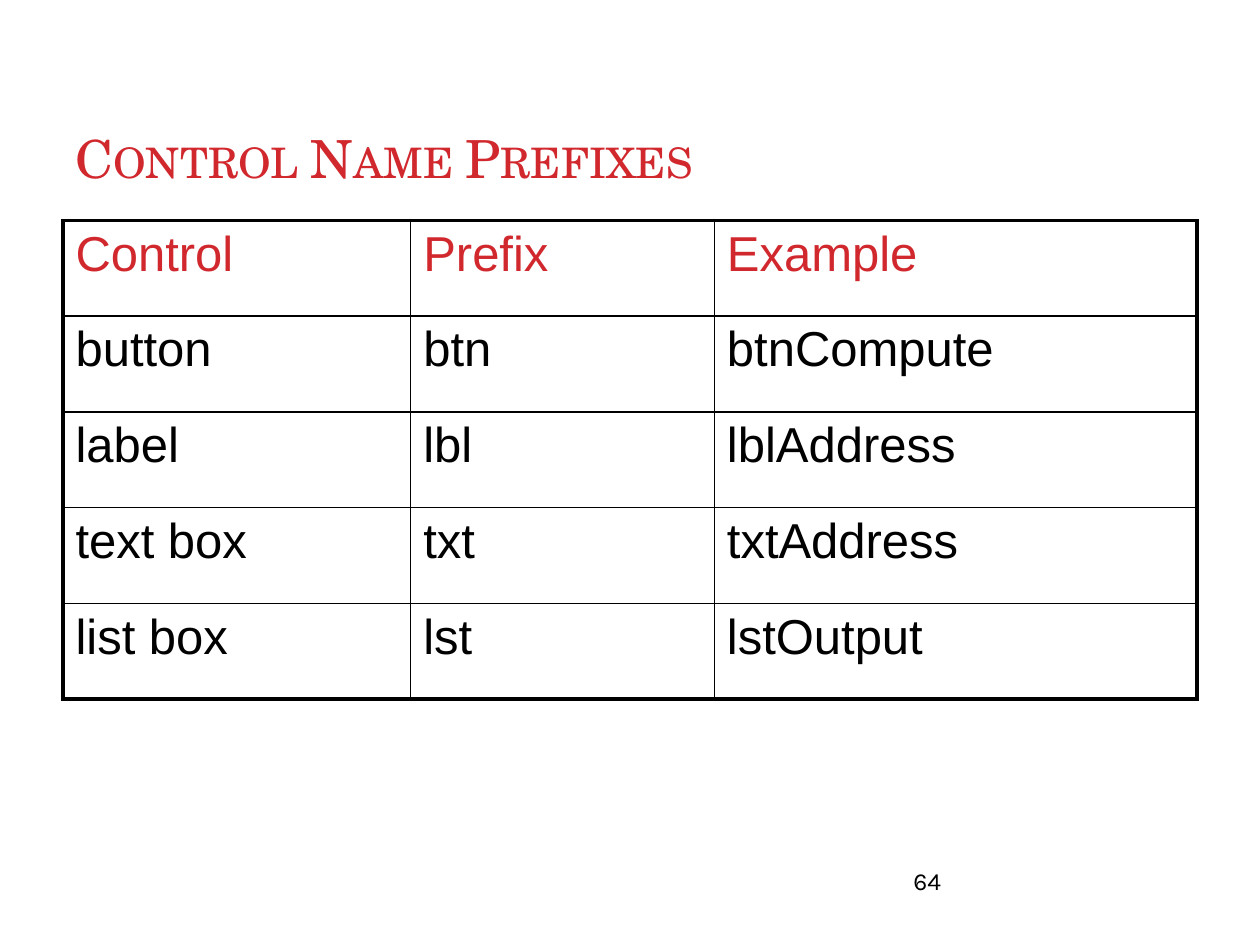
import pptx
import pptx.dml.color
import pptx.enum.text
import pptx.oxml.ns
import pptx.util
from lxml import etree

Inches = pptx.util.Inches
Pt = pptx.util.Pt
Anchor = pptx.enum.text.MSO_ANCHOR
RED = pptx.dml.color.RGBColor(0xD1, 0x28, 0x2E)
BLACK = pptx.dml.color.RGBColor(0, 0, 0)

PREFIXES = [
    ("Control", "Prefix", "Example"),
    ("button", "btn", "btnCompute"),
    ("label", "lbl", "lblAddress"),
    ("text box", "txt", "txtAddress"),
    ("list box", "lst", "lstOutput"),
]


def add_child(parent, name, **attributes):
    return etree.SubElement(parent, pptx.oxml.ns.qn(name), attributes)


def write_text(frame, text, *, font, size, color, small_caps=False, space_before=None):
    para = frame.paragraphs[0]
    span = para.add_run()
    span.text = text
    span.font.name = font
    span.font.size = Pt(size)
    span.font.color.rgb = color
    if small_caps:
        span._r.get_or_add_rPr().set("cap", "small")
    if space_before is not None:
        spacing = add_child(para._p.get_or_add_pPr(), "a:spcBef")
        add_child(spacing, "a:spcPct", val=str(space_before * 1000))


class SlideBuilder:
    title_font = "TeX Gyre Schola"
    table_font = "Arial"
    number_font = "Karla"
    outer_line = Pt(2.25)
    inner_line = Pt(1)

    def __init__(self, deck):
        self.page = deck.slides.add_slide(deck.slide_layouts[6])

    def text(self, text, left, top, width, height, *, anchor=Anchor.TOP,
             inset=(0.1, 0.05), **style):
        box = self.page.shapes.add_textbox(
            Inches(left), Inches(top), Inches(width), Inches(height))
        frame = box.text_frame
        frame.word_wrap = True
        frame.vertical_anchor = anchor
        frame.margin_left = frame.margin_right = Inches(inset[0])
        frame.margin_top = frame.margin_bottom = Inches(inset[1])
        write_text(frame, text, **style)

    def border(self, cell, side, outer):
        width = self.outer_line if outer else self.inner_line
        line = add_child(cell._tc.get_or_add_tcPr(), f"a:ln{side}", w=str(width))
        fill = add_child(line, "a:solidFill")
        add_child(fill, "a:srgbClr", val=str(BLACK))

    def table(self, rows, left, top, widths, row_height):
        last_row, last_column = len(rows) - 1, len(widths) - 1
        table = self.page.shapes.add_table(
            len(rows), len(widths), Inches(left), Inches(top),
            Inches(sum(widths)), Inches(row_height * len(rows))).table
        table.first_row = False
        table.horz_banding = False
        for column, width in zip(table.columns, widths):
            column.width = Inches(width)
        for i, texts in enumerate(rows):
            table.rows[i].height = Inches(row_height)
            for j, text in enumerate(texts):
                cell = table.cell(i, j)
                cell.margin_left = cell.margin_right = Inches(0.1)
                cell.margin_top = cell.margin_bottom = Inches(0.05)
                outer_sides = {"L": j == 0, "R": j == last_column,
                               "T": i == 0, "B": i == last_row}
                for side, outer in outer_sides.items():
                    self.border(cell, side, outer)
                cell.fill.background()
                write_text(cell.text_frame, text, font=self.table_font, size=28,
                           color=RED if i == 0 else BLACK, space_before=20)


def main():
    deck = pptx.Presentation()
    deck.slide_width = Inches(10)
    deck.slide_height = Inches(7.5)
    builder = SlideBuilder(deck)
    builder.text("Control Name Prefixes", 0.5, 0.3, 9, 1.25, anchor=Anchor.BOTTOM,
                 font=builder.title_font, size=30, color=RED, small_caps=True)
    builder.table(PREFIXES, 0.5, 1.75, [2.76, 2.41, 3.83], 0.76)
    builder.text("64", 7.17, 6.83, 2.33, 0.52, inset=(0.08, 0.04),
                 font=builder.number_font, size=14, color=BLACK)
    deck.save("out.pptx")


if __name__ == "__main__":
    main()
